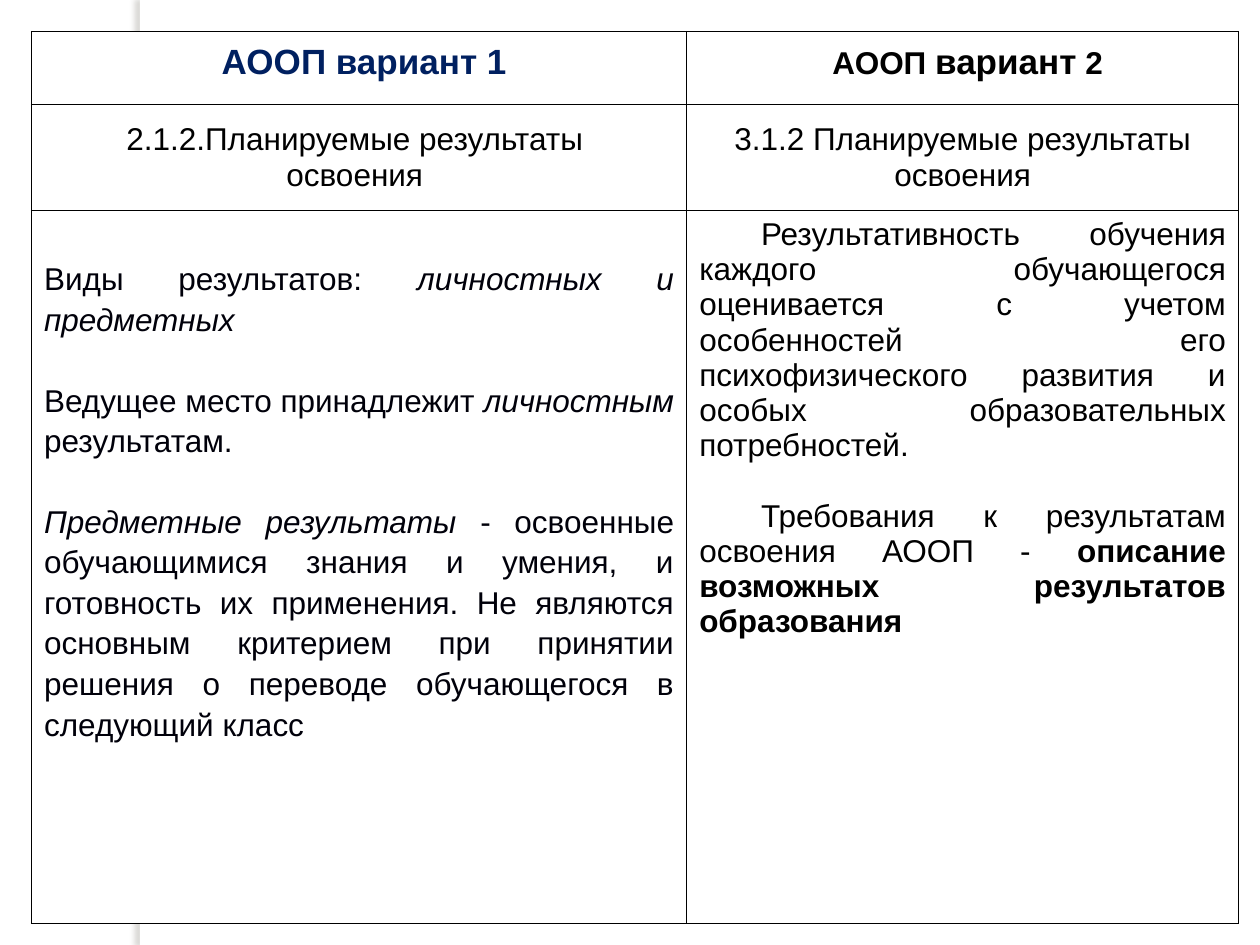
from lxml import etree
from pptx import Presentation
from pptx.dml.color import RGBColor
from pptx.enum.shapes import MSO_SHAPE
from pptx.enum.text import MSO_ANCHOR, PP_ALIGN
from pptx.oxml import parse_xml
from pptx.oxml.ns import qn
from pptx.util import Inches, Pt

RECTANGLE = MSO_SHAPE.RECTANGLE
TOP, MIDDLE = MSO_ANCHOR.TOP, MSO_ANCHOR.MIDDLE
CENTER, JUSTIFY = PP_ALIGN.CENTER, PP_ALIGN.JUSTIFY
NAMESPACE = 'xmlns:a="http://schemas.openxmlformats.org/drawingml/2006/main"'
COLORS = {"white": "FFFFFF", "black": "000000", "navy": "002060",
          "ink": "00000A", "shadow": "736F63"}


def add_borders(cell):
    properties = cell._tc.get_or_add_tcPr()
    for position, side in enumerate(("lnL", "lnR", "lnT", "lnB")):
        properties.insert(position, parse_xml(
            f'<a:{side} {NAMESPACE} w="12700"><a:solidFill>'
            f'<a:srgbClr val="{COLORS["black"]}"/></a:solidFill></a:{side}>'))


def fill_cell(cell, content):
    cell.fill.solid()
    cell.fill.fore_color.rgb = RGBColor.from_string(COLORS["white"])
    cell.vertical_anchor = content.get("anchor", TOP)
    left, top, right, bottom = content.get("margins", (0.1, 0.05, 0.1, 0.05))
    cell.margin_left, cell.margin_top = Inches(left), Inches(top)
    cell.margin_right, cell.margin_bottom = Inches(right), Inches(bottom)
    frame = cell.text_frame
    for index, spans in enumerate(content["paras"]):
        para = frame.add_paragraph() if index else frame.paragraphs[0]
        para.alignment = content.get("align", CENTER)
        para.line_spacing = content.get("spacing", 1.0)
        para.space_before = Pt(content.get("gap", 0) if index else 0)
        if "indent" in content:
            properties = para._p.get_or_add_pPr()
            properties.set("marL", "0")
            properties.set("indent", str(Inches(content["indent"])))
        for text, size, style in spans:
            span = para.add_run()
            span.text = text
            span.font.name = "Arial"
            span.font.size = Pt(size)
            span.font.bold = style == "bold"
            span.font.italic = style == "italic"
            span.font.color.rgb = RGBColor.from_string(
                COLORS[content.get("color", "black")])
    add_borders(cell)


deck = Presentation()
deck.slide_width, deck.slide_height = Inches(10), Inches(7.5)
page = deck.slides.add_slide(deck.slide_layouts[6])

band = page.shapes.add_shape(RECTANGLE, Inches(1.11), 0, Inches(0.08), Inches(7.5))
band.fill.solid()
band.fill.fore_color.rgb = RGBColor.from_string(COLORS["white"])
band.line.fill.background()
band.shadow.inherit = False
effects = band._element.spPr.find(qn("a:effectLst"))
shadow = etree.SubElement(effects, qn("a:outerShdw"), blurRad=str(Pt(3)),
                          dist=str(Pt(3)), dir="10800000", rotWithShape="0")
shade = etree.SubElement(shadow, qn("a:srgbClr"), val=COLORS["shadow"])
etree.SubElement(shade, qn("a:alpha"), val="25000")

ROWS = [
    [
        {"margins": (0.12, 0.04, 0.04, 0.04), "spacing": 1.15, "color": "navy",
         "paras": [[("АООП вариант 1", 20, "bold")]]},
        {"margins": (0.12, 0.04, 0.04, 0.04), "spacing": 1.15,
         "paras": [[("АООП ", 18, "bold"), ("вариант", 20, "bold"),
                    (" 2", 18, "bold")]]},
    ],
    [
        {"anchor": MIDDLE, "margins": (0.1, 0.05, 0.17, 0.05),
         "paras": [[("2.1.2.Планируемые результаты", 18, "plain")],
                   [("освоения", 18, "plain")]]},
        {"anchor": MIDDLE,
         "paras": [[("3.1.2\u00a0Планируемые результаты освоения", 18, "plain")]]},
    ],
    [
        {"align": JUSTIFY, "margins": (0.1, 0.37, 0.1, 0.05), "spacing": 1.15,
         "gap": 23, "color": "ink",
         "paras": [
             [("Виды результатов: ", 18, "plain"),
              ("личностных и предметных", 18, "italic")],
             [("Ведущее место принадлежит ", 18, "plain"),
              ("личностным", 18, "italic"), (" результатам.", 18, "plain")],
             [("Предметные результаты", 18, "italic"),
              (" - освоенные обучающимися знания и умения, и готовность их "
               "применения. Не являются основным критерием при принятии решения "
               "о переводе обучающегося в следующий класс", 18, "plain")]]},
        {"align": JUSTIFY, "indent": 0.49, "gap": 20,
         "paras": [
             [("Результативность обучения каждого обучающегося оценивается с "
               "учетом особенностей его психофизического развития и особых "
               "образовательных потребностей.", 18, "plain")],
             [("Требования к результатам освоения АООП - ", 18, "plain"),
              ("описание возможных результатов образования", 18, "bold")]]},
    ],
]

table = page.shapes.add_table(3, 2, Inches(0.25), Inches(0.25),
                              Inches(9.58), Inches(7.08)).table
table.first_row = False
table.horz_banding = False
for column, width in zip(table.columns, (5.2, 4.38)):
    column.width = Inches(width)
for row, height in zip(table.rows, (0.58, 0.84, 5.66)):
    row.height = Inches(height)
for row, contents in zip(table.rows, ROWS):
    for cell, content in zip(row.cells, contents):
        fill_cell(cell, content)

deck.save("out.pptx")
